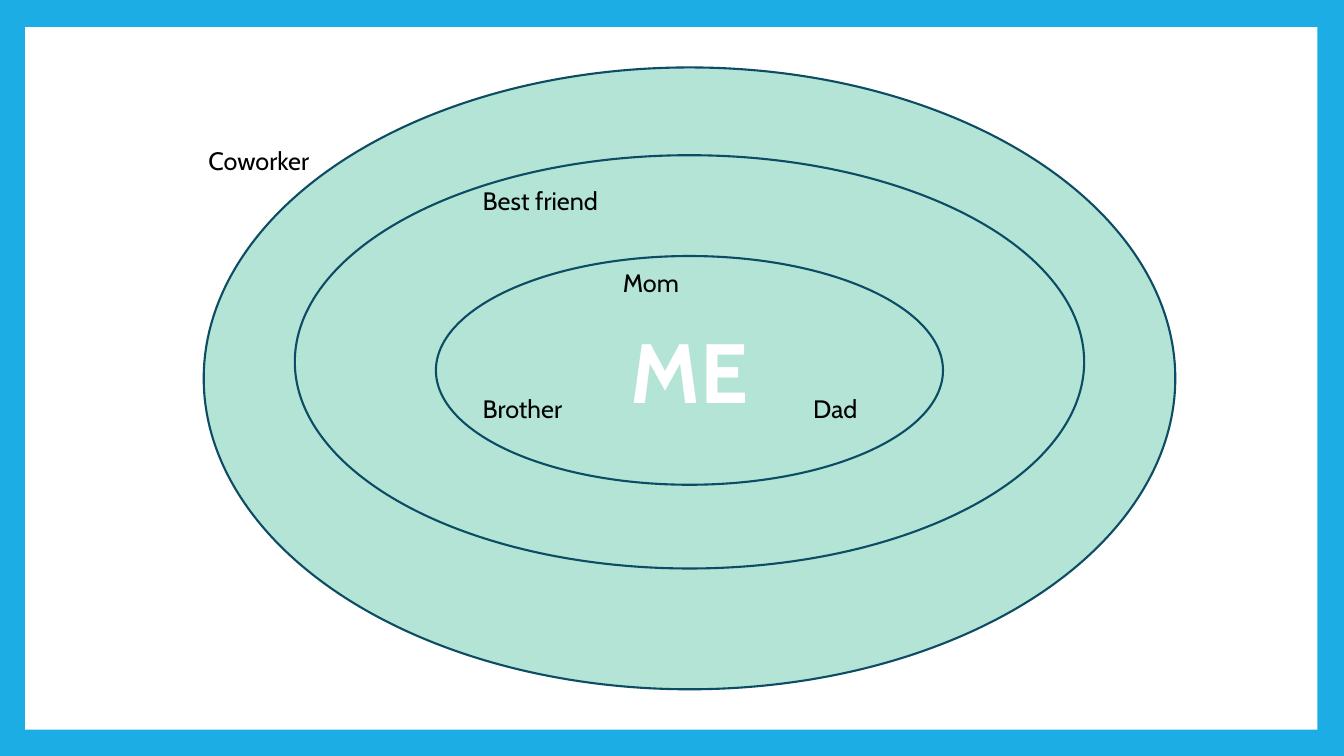
from pptx import Presentation
from pptx.dml.color import RGBColor
from pptx.enum.shapes import MSO_SHAPE
from pptx.enum.text import MSO_ANCHOR, MSO_AUTO_SIZE, PP_ALIGN
from pptx.util import Pt

BLUE = RGBColor(0x1C, 0xAD, 0xE4)
WHITE = RGBColor(0xFF, 0xFF, 0xFF)
MINT = RGBColor(0xB3, 0xE4, 0xD6)
NAVY = RGBColor(0x0C, 0x4C, 0x64)
BLACK = RGBColor(0, 0, 0)
FONT = "Cabin"

# Content: rings from outer to inner (top, width, height)
CENTER_X = 492.5
RINGS = [(48.2, 694, 444.2), (110.9, 563.8, 295.2), (182.9, 362.2, 163.4)]
CENTER_TEXT = "ME"

# People: text, left, top, width, wrap
LABEL_HEIGHT = 29
PEOPLE = [
    ("Mom", 437.8, 187.2, 136, True),
    ("Dad", 573.8, 277.2, 83.5, True),
    ("Brother", 337.7, 277.2, 72, False),
    ("Best friend", 337.7, 128.9, 190, True),
    ("Coworker", 141.8, 100.1, 87.1, False),
]


def add_filled_shape(slide, kind, left, top, width, height, color):
    shape = slide.shapes.add_shape(kind, Pt(left), Pt(top), Pt(width), Pt(height))
    shape.shadow.inherit = False
    shape.fill.solid()
    shape.fill.fore_color.rgb = color
    return shape


def set_text(paragraph, text, size, color, bold=False):
    paragraph.text = text
    paragraph.font.name = FONT
    paragraph.font.size = Pt(size)
    paragraph.font.bold = bold
    paragraph.font.color.rgb = color


def main():
    presentation = Presentation()
    presentation.slide_width = Pt(960)
    presentation.slide_height = Pt(540)
    slide = presentation.slides.add_slide(presentation.slide_layouts[6])

    # Blue frame around a white panel
    slide.background.fill.solid()
    slide.background.fill.fore_color.rgb = BLUE
    panel = add_filled_shape(slide, MSO_SHAPE.RECTANGLE, 18, 19.4, 923, 501.8, WHITE)
    panel.line.fill.background()

    # Rings share one vertical axis
    for top, width, height in RINGS:
        ring = add_filled_shape(slide, MSO_SHAPE.OVAL, CENTER_X - width / 2, top,
                                width, height, MINT)
        ring.line.color.rgb = NAVY
        ring.line.width = Pt(1.5)

    # The innermost ring holds the central word
    ring.text_frame.vertical_anchor = MSO_ANCHOR.MIDDLE
    paragraph = ring.text_frame.paragraphs[0]
    paragraph.alignment = PP_ALIGN.CENTER
    set_text(paragraph, CENTER_TEXT, 60, WHITE, bold=True)

    # People
    for text, left, top, width, wrap in PEOPLE:
        label = slide.shapes.add_textbox(Pt(left), Pt(top), Pt(width), Pt(LABEL_HEIGHT))
        label.text_frame.word_wrap = wrap
        label.text_frame.auto_size = MSO_AUTO_SIZE.SHAPE_TO_FIT_TEXT
        set_text(label.text_frame.paragraphs[0], text, 18, BLACK)

    presentation.save("out.pptx")


if __name__ == "__main__":
    main()
